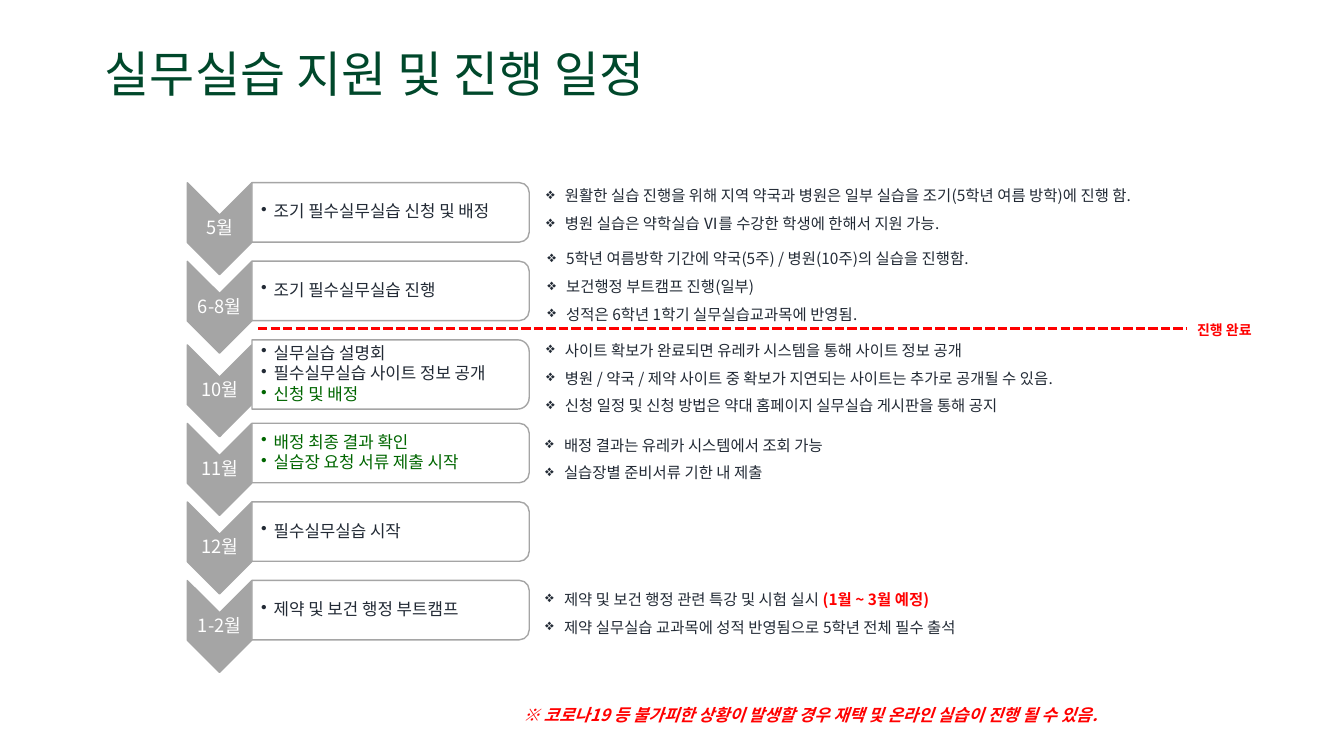
from dataclasses import dataclass

from lxml import etree
from pptx import Presentation
from pptx.dml.color import RGBColor
from pptx.enum.dml import MSO_LINE
from pptx.enum.shapes import MSO_CONNECTOR, MSO_SHAPE
from pptx.enum.text import MSO_ANCHOR, MSO_AUTO_SIZE, PP_ALIGN
from pptx.oxml.ns import qn
from pptx.util import Pt

CHEVRON, HALF_ROUNDED = MSO_SHAPE.CHEVRON, MSO_SHAPE.ROUND_2_SAME_RECTANGLE
STRAIGHT, SQUARE_DOTS = MSO_CONNECTOR.STRAIGHT, MSO_LINE.SQUARE_DOT
TOP, MIDDLE = MSO_ANCHOR.TOP, MSO_ANCHOR.MIDDLE
LEFT, CENTER = PP_ALIGN.LEFT, PP_ALIGN.CENTER


@dataclass(frozen=True)
class Theme:
    font: str = "Noto Sans CJK KR"
    title: str = "00482B"
    ink: str = "222A35"
    green: str = "006600"
    red: str = "FF0000"
    gray: str = "A5A5A5"
    white: str = "FFFFFF"
    title_size: float = 35
    month_size: float = 13
    step_size: float = 12
    note_size: float = 11
    done_size: float = 10


THEME = Theme()

TITLE = "실무실습 지원 및 진행 일정"
# Month, then steps as (text, colour)
SCHEDULE = [
    ("5월", [("조기 필수실무실습 신청 및 배정", THEME.ink)]),
    ("6-8월", [("조기 필수실무실습 진행", THEME.ink)]),
    ("10월", [("실무실습 설명회", THEME.ink),
             ("필수실무실습 사이트 정보 공개", THEME.ink),
             ("신청 및 배정", THEME.green)]),
    ("11월", [("배정 최종 결과 확인", THEME.green),
             ("실습장 요청 서류 제출 시작", THEME.green)]),
    ("12월", [("필수실무실습 시작", THEME.ink)]),
    ("1-2월", [("제약 및 보건 행정 부트캠프", THEME.ink)]),
]
# Left, top, then lines as (text, optional highlighted ending)
NOTES = [
    (383, 123, [("원활한 실습 진행을 위해 지역 약국과 병원은 일부 실습을 조기(5학년 여름 방학)에 진행 함.", ""),
                ("병원 실습은 약학실습 Ⅵ를 수강한 학생에 한해서 지원 가능.", "")]),
    (383.8, 168, [("5학년 여름방학 기간에 약국(5주) / 병원(10주)의 실습을 진행함.", ""),
                  ("보건행정 부트캠프 진행(일부)", ""),
                  ("성적은 6학년 1학기 실무실습교과목에 반영됨.", "")]),
    (383, 233.5, [("사이트 확보가 완료되면 유레카 시스템을 통해 사이트 정보 공개", ""),
                  ("병원 / 약국 / 제약 사이트 중 확보가 지연되는 사이트는 추가로 공개될 수 있음.", ""),
                  ("신청 일정 및 신청 방법은 약대 홈페이지 실무실습 게시판을 통해 공지", "")]),
    (382.3, 301, [("배정 결과는 유레카 시스템에서 조회 가능", ""),
                  ("실습장별 준비서류 기한 내 제출", "")]),
    (382.3, 411.3, [("제약 및 보건 행정 관련 특강 및 시험 실시 ", "(1월 ~ 3월 예정)"),
                    ("제약 실무실습 교과목에 성적 반영됨으로 5학년 전체 필수 출석", "")]),
]
DONE = "진행 완료"
CAUTION = "※ 코로나19 등 불가피한 상황이 발생할 경우 재택 및 온라인 실습이 진행 될 수 있음."

FIRST_CENTER, PITCH = 163.4, 56.1
TALL_ROW, TALL_ROW_SHIFT = 2, 3.6
CHEVRON_LEFT, CHEVRON_W, CHEVRON_H = 133.8, 46, 65.6
STEP_LEFT, STEP_W, STEP_H, TALL_STEP_H = 180, 198, 42.5, 49.5
STEP_RISE = 11.7
NOTE_W, NOTE_LINE_H = 459, 19.8
DONE_Y = 234.7


def style(paragraph, size, color, spacing, bullet="", indent=0, bold=None, italic=None):
    paragraph.line_spacing = spacing
    if bullet:
        props = paragraph._p.get_or_add_pPr()
        props.set("marL", str(Pt(indent)))
        props.set("indent", str(-Pt(indent)))
        etree.SubElement(props, qn("a:buChar"), char=bullet)
    font = paragraph.font
    font.size, font.bold, font.italic = Pt(size), bold, italic
    font.color.rgb = RGBColor.from_string(color)
    font.name = THEME.font
    defaults = paragraph._p.pPr.find(qn("a:defRPr"))
    etree.SubElement(defaults, qn("a:ea"), typeface=THEME.font)


def add_text_frame(slide, left, top, width, height, anchor=TOP, insets=None):
    """Insets are left and the other three sides, in points."""
    frame = slide.shapes.add_textbox(Pt(left), Pt(top), Pt(width), Pt(height)).text_frame
    frame.word_wrap = True
    frame.vertical_anchor = anchor
    if insets:
        frame.margin_left = Pt(insets[0])
        frame.margin_top = frame.margin_right = frame.margin_bottom = Pt(insets[1])
    return frame


def paragraphs_for(frame, items):
    """Yield each item with its own paragraph."""
    for index, item in enumerate(items):
        yield (frame.add_paragraph() if index else frame.paragraphs[0]), item


def add_turned_shape(slide, preset, left, center_y, width, height, fill):
    """Add a shape turned a quarter clockwise; width and height are as seen."""
    shape = slide.shapes.add_shape(
        preset, Pt(left + (width - height) / 2), Pt(center_y - width / 2), Pt(height), Pt(width))
    shape.rotation = 90
    shape.shadow.inherit = False
    shape.fill.solid()
    shape.fill.fore_color.rgb = RGBColor.from_string(fill)
    shape.line.color.rgb = RGBColor.from_string(THEME.gray)
    shape.line.width = Pt(1)
    return shape


def add_title(slide):
    title = slide.shapes.title
    title.left, title.top, title.width, title.height = Pt(67.7), Pt(15.8), Pt(792.7), Pt(64)
    frame = title.text_frame
    frame.text = TITLE
    frame.auto_size = MSO_AUTO_SIZE.NONE
    frame.vertical_anchor = MIDDLE
    frame.paragraphs[0].alignment = LEFT
    style(frame.paragraphs[0], THEME.title_size, THEME.title, 1.2)


def add_month(slide, month, steps, center_y):
    add_turned_shape(slide, CHEVRON, CHEVRON_LEFT, center_y, CHEVRON_W, CHEVRON_H, THEME.gray)
    label = add_text_frame(slide, CHEVRON_LEFT, center_y - 10, CHEVRON_W, 20, MIDDLE, (0.7, 0.7))
    label.text = month
    label.paragraphs[0].alignment = CENTER
    style(label.paragraphs[0], THEME.month_size, THEME.white, 0.9)

    height = TALL_STEP_H if len(steps) > 2 else STEP_H
    step_y = center_y - STEP_RISE
    panel = add_turned_shape(slide, HALF_ROUNDED, STEP_LEFT, step_y, STEP_W, height, THEME.white)
    panel_color = panel._element.spPr.find(qn("a:solidFill"))[0]
    etree.SubElement(panel_color, qn("a:alpha"), val="90000")
    frame = add_text_frame(slide, STEP_LEFT, step_y - height / 2 + 2, STEP_W - 2, height - 4,
                           MIDDLE, (6.5, 0.7))
    for paragraph, (text, color) in paragraphs_for(frame, steps):
        paragraph.text = text
        paragraph.space_after = Pt(THEME.step_size * 0.15)
        style(paragraph, THEME.step_size, color, 0.9, "•", 9)


def add_note(slide, left, top, lines):
    frame = add_text_frame(slide, left, top, NOTE_W, len(lines) * NOTE_LINE_H + 7.2)
    for paragraph, (text, highlight) in paragraphs_for(frame, lines):
        paragraph.text = text
        style(paragraph, THEME.note_size, THEME.ink, 1.5, "❖", 13.5)
        if highlight:
            ending = paragraph.add_run()
            ending.text = highlight
            ending.font.bold = True
            ending.font.color.rgb = RGBColor.from_string(THEME.red)


def add_done_line(slide):
    line = slide.shapes.add_connector(STRAIGHT, Pt(184.3), Pt(DONE_Y), Pt(847.4), Pt(DONE_Y))
    line.line.color.rgb = RGBColor.from_string(THEME.red)
    line.line.width = Pt(2.25)
    line.line.dash_style = SQUARE_DOTS
    etree.SubElement(line._element.spPr, qn("a:effectLst"))


def add_red_line(slide, text, left, top, width, height, size, italic=None):
    frame = add_text_frame(slide, left, top, width, height)
    frame.text = text
    style(frame.paragraphs[0], size, THEME.red, 1.5, bold=True, italic=italic)


def main():
    deck = Presentation()
    deck.slide_width, deck.slide_height = Pt(960), Pt(540)
    slide = deck.slides.add_slide(deck.slide_layouts[5])
    add_title(slide)
    for row, (month, steps) in enumerate(SCHEDULE):
        shift = TALL_ROW_SHIFT if row >= TALL_ROW else 0
        add_month(slide, month, steps, FIRST_CENTER + row * PITCH + shift)
    add_done_line(slide)
    for left, top, lines in NOTES:
        add_note(slide, left, top, lines)
    add_red_line(slide, DONE, 848, 220.3, 57, 25, THEME.done_size)
    add_red_line(slide, CAUTION, 366.5, 492.5, 481, 29, THEME.step_size, italic=True)
    deck.save("out.pptx")


if __name__ == "__main__":
    main()
